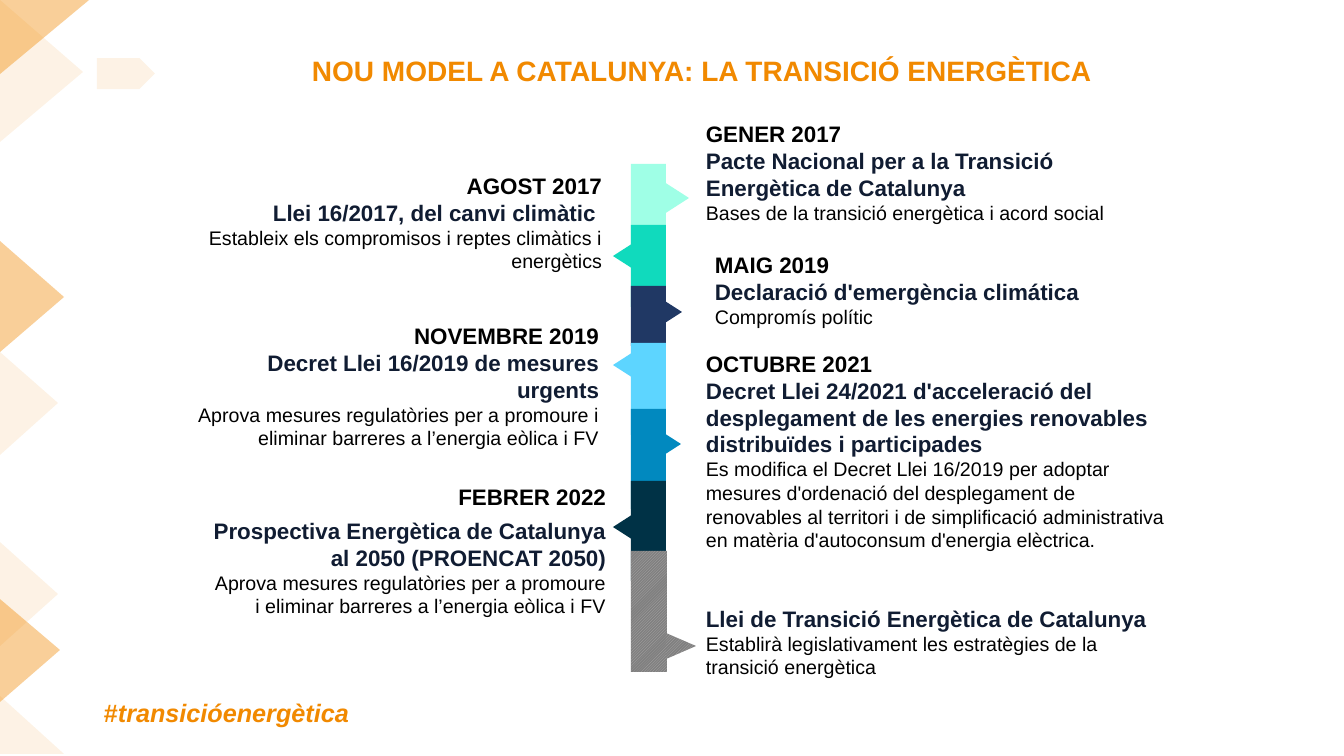
from lxml import etree
from pptx import Presentation
from pptx import util as u
from pptx.dml.color import RGBColor
from pptx.enum import dml, shapes, text
from pptx.oxml.ns import qn

SCALE = 914400 / 100.8  # EMU in one px
ORANGE, NAVY, BLACK = "F18900", "101C32", "000000"


def px(length):
    return u.Emu(round(length * SCALE))


def color(value):
    return RGBColor.from_string(value)


class TimelineSlide:
    font = "Arial"

    def __init__(self, presentation):
        self.slide = presentation.slides.add_slide(presentation.slide_layouts[6])

    def paint(self, shape, fill, alpha=None):
        shape.shadow.inherit = False
        shape.line.fill.background()
        if fill is None:  # hatched grey for the step still to come
            shape.fill.patterned()
            shape.fill.pattern = dml.MSO_PATTERN.DARK_UPWARD_DIAGONAL
            shape.fill.fore_color.rgb = color("AFABAB")
            shape.fill.back_color.rgb = color("808080")
            return
        shape.fill.solid()
        shape.fill.fore_color.rgb = color(fill)
        if alpha:
            srgb = shape.fill._xPr.find(".//" + qn("a:srgbClr"))
            etree.SubElement(srgb, qn("a:alpha")).set("val", str(alpha * 1000))

    def shape(self, kind, box, fill, alpha=None, rotation=0):
        shape = self.slide.shapes.add_shape(kind, *map(px, box))
        shape.rotation = rotation
        self.paint(shape, fill, alpha)

    def polygon(self, points, fill, alpha):
        start, *others = [(px(x), px(y)) for x, y in points]
        builder = self.slide.shapes.build_freeform(*start)
        builder.add_line_segments(others, close=True)
        self.paint(builder.convert_to_shape(), fill, alpha)

    def text_box(self, box, grow=True):
        frame = self.slide.shapes.add_textbox(*map(px, box)).text_frame
        frame.word_wrap = True
        if grow:
            frame.auto_size = text.MSO_AUTO_SIZE.SHAPE_TO_FIT_TEXT
        return frame

    def style(self, paragraph, size, fill, bold):
        paragraph.font.name = self.font
        paragraph.font.size = u.Pt(size)
        paragraph.font.bold = bold
        paragraph.font.color.rgb = color(fill)

    def title(self, box, words):
        paragraph = self.text_box(box, grow=False).paragraphs[0]
        paragraph.text = words
        paragraph.line_spacing = 0.9
        self.style(paragraph, 20, ORANGE, True)

    def hashtag(self, box, word):
        paragraph = self.text_box(box).paragraphs[0]
        paragraph.add_run().text = "#"
        run = paragraph.add_run()
        run.text = word
        run.font.italic = True
        self.style(paragraph, 18, ORANGE, True)

    def milestone(self, box, date, heading, detail, right=False, gap=0):
        frame = self.text_box(box)
        lines = [(date, 16, BLACK, True), (heading, 16, NAVY, True), (detail, 14, BLACK, False)]
        lines = [line for line in lines if line[0]]
        for index, (words, size, fill, bold) in enumerate(lines):
            paragraph = frame.add_paragraph() if index else frame.paragraphs[0]
            paragraph.text = words
            paragraph.alignment = text.PP_ALIGN.RIGHT if right else text.PP_ALIGN.LEFT
            if gap and words == heading:
                paragraph.space_before = u.Pt(gap)
            self.style(paragraph, size, fill, bold)


# Triangles on the left edge: corners, opacity
EDGE = [
    ([(0, 702), (0, 599), (60, 650)], 40),
    ([(0, 455), (0, 352), (58, 403)], 10),
    ([(0, 352), (0, 241), (64, 297)], 40),
    ([(0, 142), (0, 0), (83, 72)], 10),
    ([(0, 74), (0, 0), (89, 0)], 40),
    ([(0, 646), (0, 542), (58, 594)], 10),
]

# Timeline bands: top, width, height, pointer box, fill
BANDS = [
    (164, 35, 80, (657, 184, 36, 28), "9FFFE6"),
    (225, 35, 82, (609, 242, 36, 28), "10DABD"),
    (286, 35, 60, (650, 298, 36, 28), "203864"),
    (343, 35, 92, (609, 351, 36, 28), "5DD5FF"),
    (409, 35, 100, (649, 430, 36, 28), "0189BF"),
    (481, 35, 100, (609, 513, 36, 28), "003246"),
    (551, 36, 121, (668, 631, 26, 30), None),
]

RIGHT_MILESTONES = [
    ((696, 115, 480, 119), "GENER 2017",
     "Pacte Nacional per a la Transició Energètica de Catalunya",
     "Bases de la transició energètica i acord social"),
    ((705, 246, 499, 92), "MAIG 2019", "Declaració d'emergència climática", "Compromís polític"),
    ((696, 345, 488, 214), "OCTUBRE 2021",
     "Decret Llei 24/2021 d'acceleració del desplegament de les energies renovables "
     "distribuïdes i participades",
     "Es modifica el Decret Llei 16/2019 per adoptar mesures d'ordenació del desplegament de "
     "renovables al territori i de simplificació administrativa en matèria d'autoconsum "
     "d'energia elèctrica."),
    ((696, 600, 467, 85), None, "Llei de Transició Energètica de Catalunya",
     "Establirà legislativament les estratègies de la transició energètica"),
]

MEASURES = ("Aprova mesures regulatòries per a promoure i eliminar barreres "
            "a l’energia eòlica i FV")
# The last value is the space in points above the heading
LEFT_MILESTONES = [
    ((188, 167, 424, 112), "AGOST 2017", "Llei 16/2017, del canvi climàtic ",
     "Estableix els compromisos i reptes climàtics i energètics", 0),
    ((185, 317, 424, 139), "NOVEMBRE 2019", "Decret Llei 16/2019 de mesures urgents", MEASURES, 0),
    ((199, 478, 417, 147), "FEBRER 2022",
     "Prospectiva Energètica de Catalunya al 2050 (PROENCAT 2050)", MEASURES, 5),
]


def main():
    presentation = Presentation()
    presentation.slide_width, presentation.slide_height = px(1344), px(756)
    page = TimelineSlide(presentation)
    kinds = shapes.MSO_SHAPE

    # Decoration
    page.shape(kinds.PENTAGON, (97, 58, 58, 31), ORANGE, 10)
    for points, alpha in EDGE:
        page.polygon(points, ORANGE, alpha)
    page.shape(kinds.RIGHT_TRIANGLE, (0, 696, 64, 58), ORANGE, 10)

    # Title and hashtag
    page.hashtag((94, 692, 377, 40), "transicióenergètica")
    page.title((302, 52, 816, 56), "NOU MODEL A CATALUNYA: LA TRANSICIÓ ENERGÈTICA")

    # Timeline, with pointers to the right and left in turn
    for index, (top, width, height, pointer, fill) in enumerate(BANDS):
        page.shape(kinds.RECTANGLE, (631, top, width, height), fill)
        page.shape(kinds.ISOSCELES_TRIANGLE, pointer, fill, rotation=270 if index % 2 else 90)

    # Milestones
    for milestone in RIGHT_MILESTONES:
        page.milestone(*milestone)
    for *milestone, gap in LEFT_MILESTONES:
        page.milestone(*milestone, right=True, gap=gap)

    presentation.save("out.pptx")


if __name__ == "__main__":
    main()
